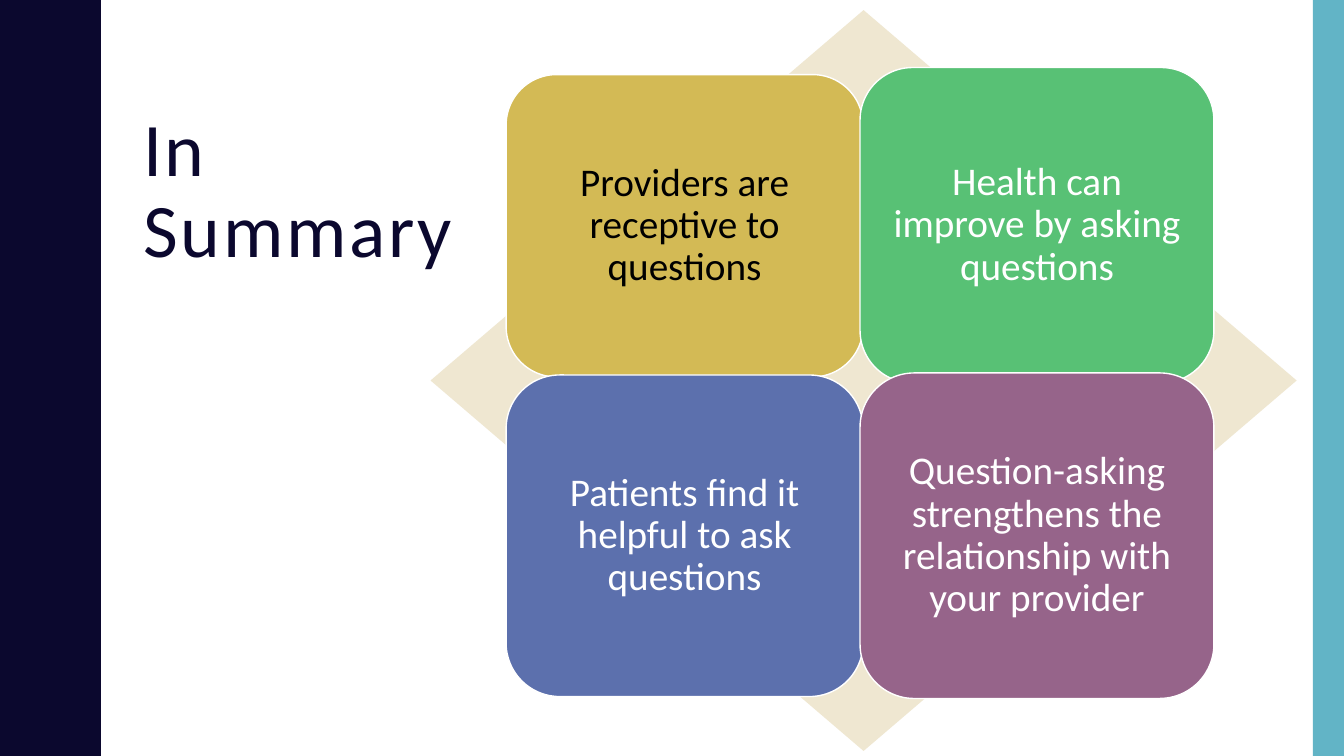
from pptx import Presentation
from pptx.dml.color import RGBColor
from pptx.enum.shapes import MSO_SHAPE as SHAPE
from pptx.enum.text import MSO_ANCHOR as ANCHOR, MSO_AUTO_SIZE as AUTO_SIZE, PP_ALIGN as ALIGN
from pptx.util import Inches, Pt

NAVY = RGBColor(0x0B, 0x08, 0x2E)
TEAL = RGBColor(0x62, 0xB4, 0xC6)
SAND = RGBColor(0xEF, 0xE7, 0xD1)
GOLD = RGBColor(0xD3, 0xBA, 0x55)
GREEN = RGBColor(0x58, 0xC1, 0x75)
BLUE = RGBColor(0x5C, 0x70, 0xAD)
PLUM = RGBColor(0x96, 0x64, 0x8A)
BLACK = RGBColor(0, 0, 0)
WHITE = RGBColor(0xFF, 0xFF, 0xFF)

FONT = "Calibri"
WIDTH, HEIGHT = 13.33, 7.5

# Rising half of one wave, as (x, y); the falling half mirrors it
WAVE_PERIOD = 1.5
WAVE_RISE = [
    (0.78, 0), (0.78, 0.07), (0.79, 0.14), (0.8, 0.2), (0.81, 0.25),
    (0.83, 0.29), (0.85, 0.33), (0.87, 0.38), (0.89, 0.42), (0.91, 0.46),
    (0.93, 0.5), (0.95, 0.55), (0.96, 0.61), (0.97, 0.68), (0.97, 0.75),
]

# Position and size, fill, text colour, text
CARDS = [
    ((5.02, 0.74, 3.54, 3), GOLD, BLACK, "Providers are receptive to questions"),
    ((8.53, 0.67, 3.51, 3.13), GREEN, WHITE, "Health can improve by asking questions"),
    ((5.02, 3.72, 3.54, 3.19), BLUE, WHITE, "Patients find it helpful to ask questions"),
    ((8.53, 3.7, 3.51, 3.23), PLUM, WHITE,
     "Question-asking strengthens the relationship with your provider"),
]


def paint(shape, color):
    shape.shadow.inherit = False
    shape.fill.solid()
    shape.fill.fore_color.rgb = color
    shape.line.fill.background()


def add_block(s, kind, box, color):
    block = s.shapes.add_shape(kind, *map(Inches, box))
    paint(block, color)
    return block


def add_wave(s):
    fall = [(x, WAVE_PERIOD - y) for x, y in reversed(WAVE_RISE[1:-1])]
    count = int(HEIGHT / WAVE_PERIOD)
    edge = [(x, y + i * WAVE_PERIOD) for i in range(count) for x, y in WAVE_RISE + fall]
    edge += [(WAVE_RISE[0][0], HEIGHT), (0, HEIGHT)]
    builder = s.shapes.build_freeform(0, 0, scale=Inches(1))
    builder.add_line_segments(edge, close=True)
    paint(builder.convert_to_shape(), NAVY)


def style_paragraph(p, size, color, align):
    p.alignment = align
    p.line_spacing = 0.9
    p.font.name = FONT
    p.font.size = Pt(size)
    p.font.color.rgb = color


def set_title(s, text):
    title = s.shapes.title
    title.left, title.top, title.width, title.height = map(Inches, (1.32, -0.68, 7.14, 5.18))
    tf = title.text_frame
    tf.auto_size = AUTO_SIZE.NONE
    tf.vertical_anchor = ANCHOR.MIDDLE
    p = tf.paragraphs[0]
    p.text = text
    style_paragraph(p, 54, NAVY, ALIGN.LEFT)
    # Letter spacing, in hundredths of a point
    for r in p.runs:
        r.font.size = Pt(54)
        r.font._element.set("spc", "200")


def add_card(s, box, fill, text_color, text):
    card = add_block(s, SHAPE.ROUNDED_RECTANGLE, box, fill)
    card.line.color.rgb = WHITE
    card.line.width = Pt(1)
    tf = card.text_frame
    tf.word_wrap = True
    tf.vertical_anchor = ANCHOR.MIDDLE
    tf.margin_left = tf.margin_right = tf.margin_top = tf.margin_bottom = Inches(0.12)
    p = tf.paragraphs[0]
    p.text = text
    style_paragraph(p, 28, text_color, ALIGN.CENTER)


def main():
    prs = Presentation()
    prs.slide_width, prs.slide_height = Inches(WIDTH), Inches(HEIGHT)
    s = prs.slides.add_slide(prs.slide_layouts[5])

    # Side bands
    add_wave(s)
    add_block(s, SHAPE.RECTANGLE, (13.02, 0, 0.31, HEIGHT), TEAL)

    # Title
    set_title(s, "In\vSummary")

    # Four cards over a diamond
    add_block(s, SHAPE.DIAMOND, (4.27, 0.1, 8.59, 7.35), SAND)
    for card in CARDS:
        add_card(s, *card)

    prs.save("out.pptx")


if __name__ == "__main__":
    main()
